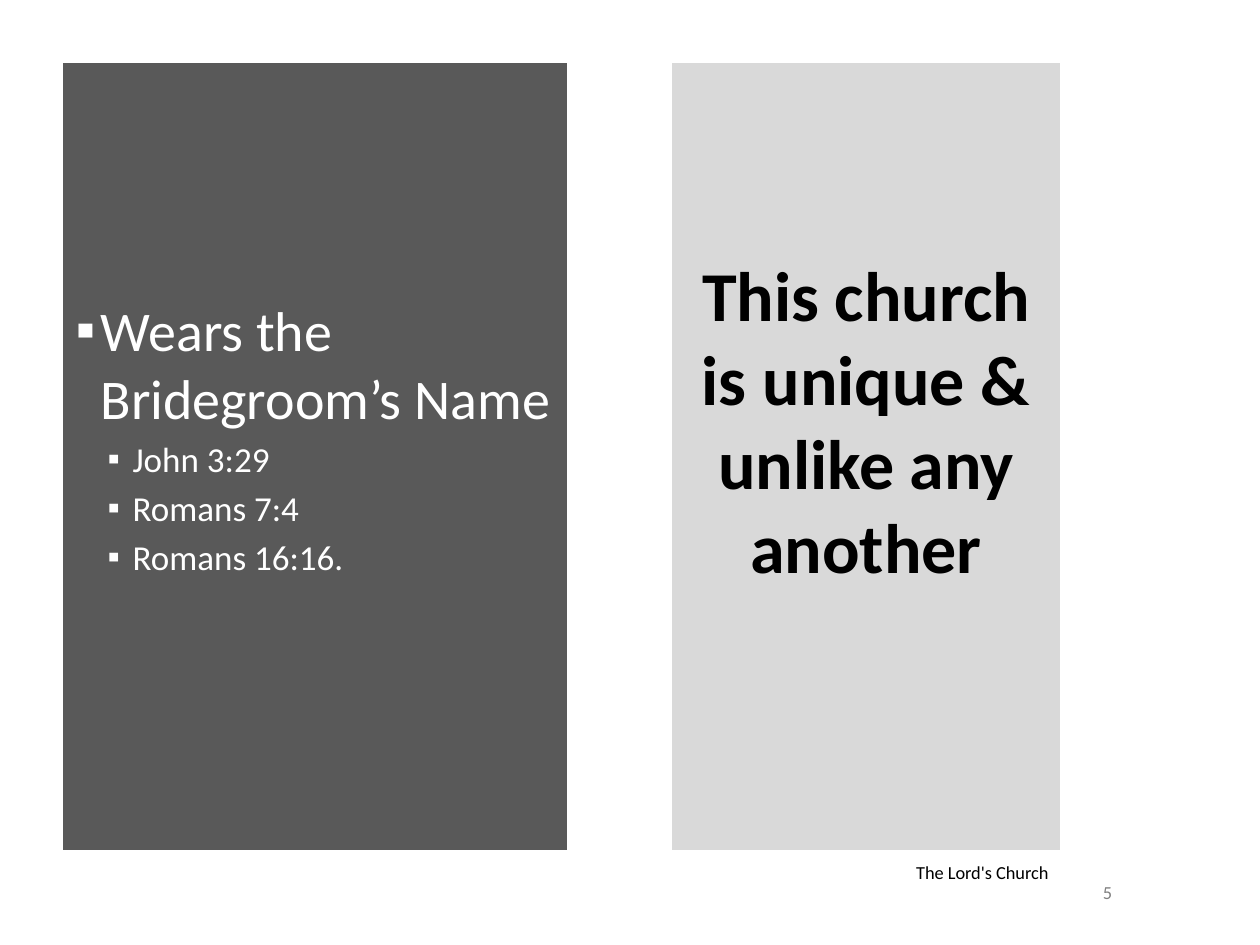
from lxml.etree import SubElement
from pptx import Presentation
from pptx.dml.color import RGBColor as RGB
from pptx.enum.text import MSO_ANCHOR as ANCHOR, MSO_AUTO_SIZE as AUTO, PP_ALIGN as ALIGN
from pptx.oxml.ns import qn
from pptx.util import Emu, Inches, Pt

COLORS = {
    "panel": "595959",
    "title_panel": "D9D9D9",
    "light": "FFFFFF",
    "dark": "000000",
    "number": "808080",
}
FONT = "Calibri"
EMU_PER_PX = 914400 / 126


def px(n):
    return Emu(round(n * EMU_PER_PX))


def color(name):
    return RGB.from_string(COLORS[name])


def add_text(p, text, size=20, fill="dark", bold=False, align=ALIGN.LEFT, before=0):
    p.alignment = align
    p.space_before = Pt(before)
    r = p.add_run()
    r.text = text
    r.font.name = FONT
    r.font.size = Pt(size)
    r.font.bold = bold
    r.font.color.rgb = color(fill)


def add_bullet(p, margin, hanging):
    pPr = p._p.get_or_add_pPr()
    pPr.set("marL", str(px(margin)))
    pPr.set("indent", str(-px(hanging)))
    bullet_color = SubElement(pPr, qn("a:buClr"))
    SubElement(bullet_color, qn("a:srgbClr")).set("val", COLORS["light"])
    SubElement(pPr, qn("a:buChar")).set("char", "▪")


class Deck:
    def __init__(self):
        self.prs = Presentation()
        self.prs.slide_width, self.prs.slide_height = Inches(10), Inches(7.5)
        self.s = None

    def slide(self):
        self.s = self.prs.slides.add_slide(self.prs.slide_layouts[1])

    def panel(self, sp, box, fill, bottom):
        sp.left, sp.top, sp.width, sp.height = map(px, box)
        sp.fill.solid()
        sp.fill.fore_color.rgb = color(fill)
        tf = sp.text_frame
        tf.word_wrap = True
        tf.auto_size = AUTO.NONE
        tf.vertical_anchor = ANCHOR.MIDDLE
        tf.margin_bottom = px(bottom)
        return tf

    def title(self, text, box):
        tf = self.panel(self.s.shapes.title, box, "title_panel", 81)
        add_text(tf.paragraphs[0], text, size=40, bold=True, align=ALIGN.CENTER)

    def body(self, items, box):
        tf = self.panel(self.s.placeholders[1], box, "panel", 46)
        for i, (level, text) in enumerate(items):
            p = tf.add_paragraph() if i else tf.paragraphs[0]
            p.level = level
            add_bullet(p, (25, 57)[level], 25)
            add_text(p, text, size=(32, 20)[level], fill="light", before=4 if i else 0)

    def label(self, text, box, anchor, **fmt):
        tf = self.s.shapes.add_textbox(*map(px, box)).text_frame
        tf.word_wrap = True
        tf.vertical_anchor = anchor
        add_text(tf.paragraphs[0], text, size=10.5, **fmt)


def main():
    deck = Deck()
    deck.slide()
    deck.body(
        [
            (0, "Wears the Bridegroom’s Name"),
            (1, "John 3:29"),
            (1, "Romans 7:4"),
            (1, "Romans 16:16."),
        ],
        (63, 63, 504, 787),
    )
    deck.title("This church is unique & unlike any another", (672, 63, 388, 787))
    deck.label("5", (1071, 882, 73, 21), ANCHOR.MIDDLE, fill="number", align=ALIGN.CENTER)
    deck.label("The Lord's Church", (672, 868, 389, 21), ANCHOR.BOTTOM, align=ALIGN.RIGHT)
    deck.prs.save("out.pptx")


if __name__ == "__main__":
    main()
